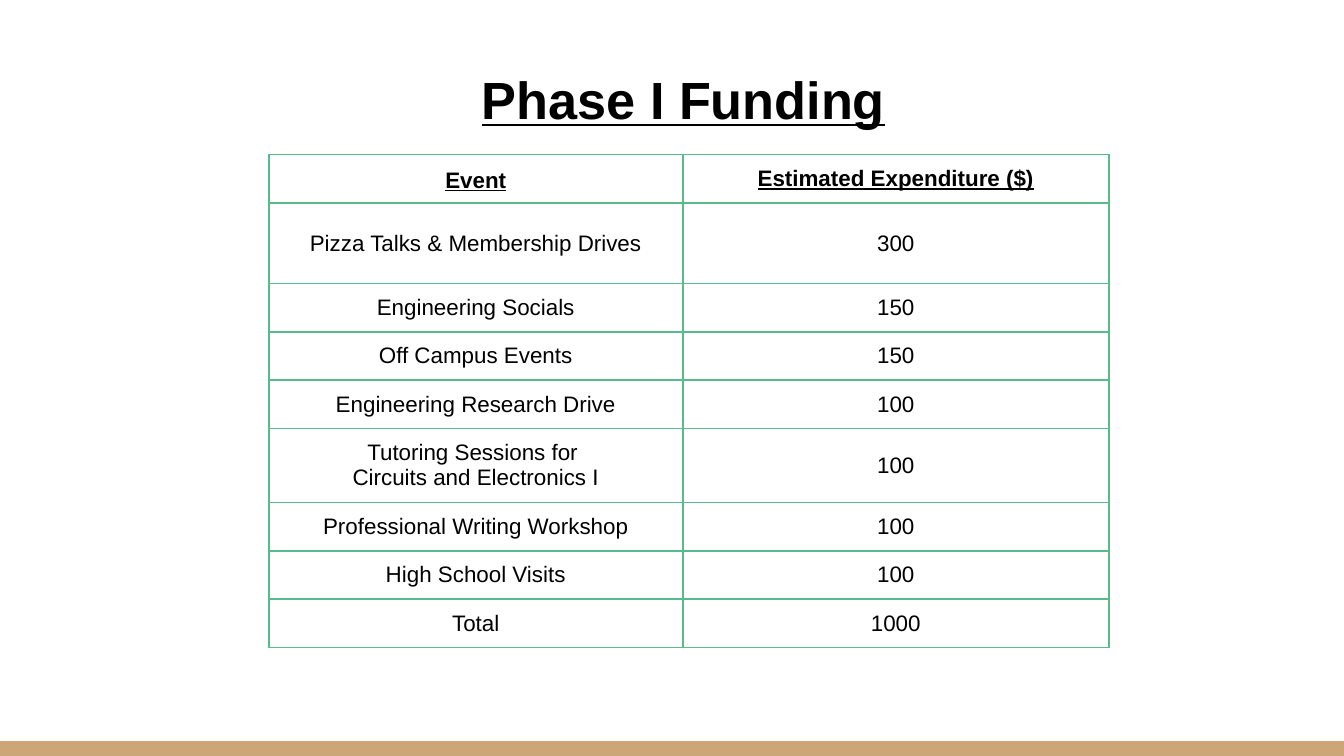
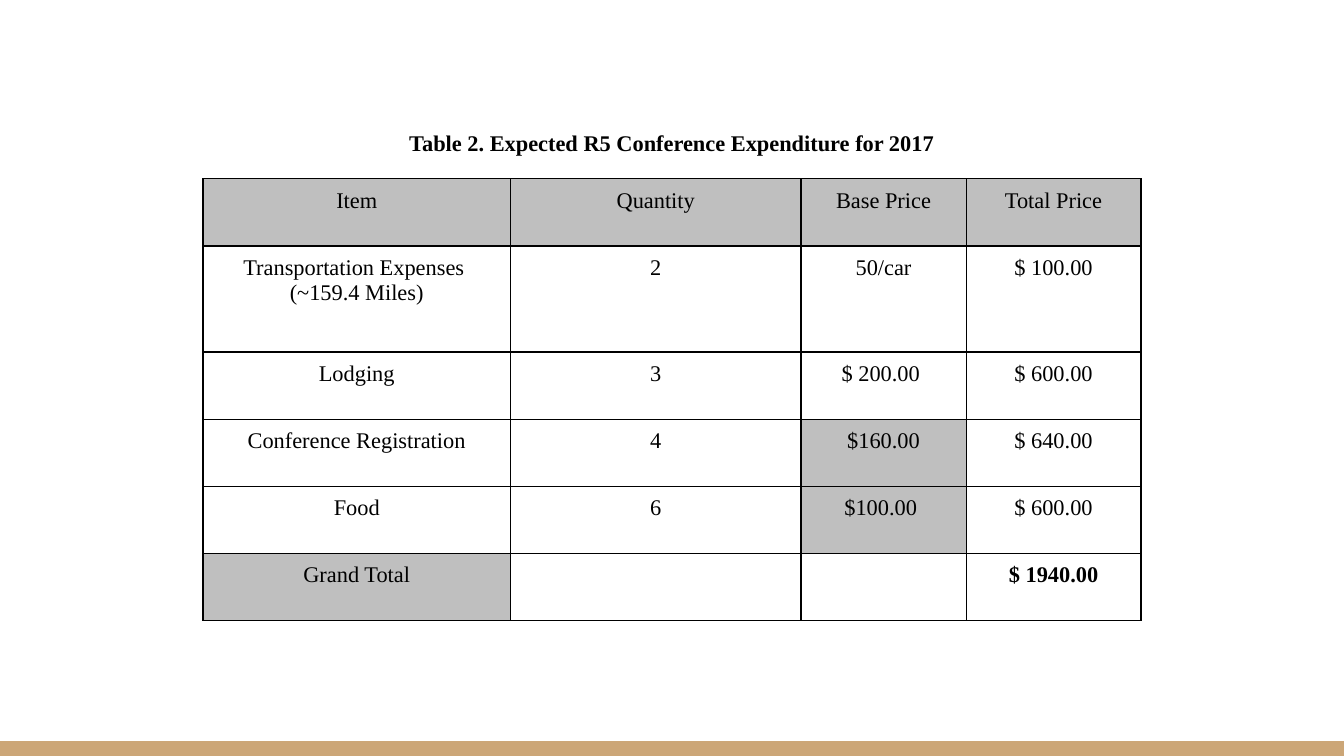
from lxml import etree
from pptx import Presentation
from pptx.dml.color import RGBColor
from pptx.enum.shapes import MSO_SHAPE
from pptx.enum.text import MSO_ANCHOR, MSO_AUTO_SIZE, PP_ALIGN
from pptx.oxml.ns import qn
from pptx.util import Inches, Pt

RECTANGLE = MSO_SHAPE.RECTANGLE
TOP, MIDDLE, BOTTOM = MSO_ANCHOR.TOP, MSO_ANCHOR.MIDDLE, MSO_ANCHOR.BOTTOM
CENTER = PP_ALIGN.CENTER
NO_AUTOFIT = MSO_AUTO_SIZE.NONE

BLACK = RGBColor(0x00, 0x00, 0x00)
TAN = RGBColor(0xCC, 0xA6, 0x77)
GREEN = RGBColor(0x57, 0xBB, 0x8A)
GRAY = RGBColor(0xBF, 0xBF, 0xBF)
SANS, SERIF = "Arial", "Times New Roman"

WIDTH, HEIGHT = 10, 10 * 9 / 16
BAND_HEIGHT = 0.11
TITLE_ONLY = 5

FUNDING = [
    ("Event", "Estimated Expenditure ($)"),
    ("Pizza Talks & Membership Drives", "300"),
    ("Engineering Socials", "150"),
    ("Off Campus Events", "150"),
    ("Engineering Research Drive", "100"),
    ("Tutoring Sessions for \nCircuits and Electronics I", "100"),
    ("Professional Writing Workshop", "100"),
    ("High School Visits", "100"),
    ("Total", "1000"),
]
FUNDING_COLS = [3.08, 3.17]
FUNDING_ROWS = [0.36, 0.6, 0.36, 0.36, 0.36, 0.55, 0.36, 0.36, 0.36]

CONFERENCE = [
    ("Item", "Quantity", "Base Price", "Total Price"),
    ("Transportation Expenses \n(~159.4 Miles)", "2", "50/car", "$ 100.00"),
    ("Lodging", "3", "$ 200.00 ", "$ 600.00"),
    ("Conference Registration", "4", "$160.00", "$ 640.00"),
    ("Food", "6", "$100.00 ", "$ 600.00"),
    ("Grand Total", "", "", "$ 1940.00"),
]
CONFERENCE_COLS = [2.29, 2.16, 1.23, 1.3]
CONFERENCE_ROWS = [0.5, 0.79, 0.5, 0.5, 0.5, 0.5]
CONFERENCE_SHADED = {(0, 0), (0, 1), (0, 2), (0, 3), (3, 2), (4, 2), (5, 0)}
GRAND_TOTAL = (5, 3)


def write(tf, text, font=SANS, size=12, bold=False, underline=False):
    """Fill a text frame with centred black text, one paragraph per line."""
    for i, line in enumerate(text.split("\n")):
        p = tf.paragraphs[0] if i == 0 else tf.add_paragraph()
        p.alignment = CENTER
        p.font.size = Pt(size)
        if line:
            r = p.add_run()
            r.text = line
            r.font.name, r.font.size = font, Pt(size)
            r.font.bold, r.font.underline = bold, underline
            r.font.color.rgb = BLACK


def add_title_slide(prs, text, box, anchor, **style):
    s = prs.slides.add_slide(prs.slide_layouts[TITLE_ONLY])
    title = s.shapes.title
    title.left, title.top, title.width, title.height = map(Inches, box)
    tf = title.text_frame
    tf.word_wrap = True
    tf.auto_size = NO_AUTOFIT
    tf.vertical_anchor = anchor
    tf.margin_left = tf.margin_right = tf.margin_top = tf.margin_bottom = Inches(0.1)
    write(tf, text, **style)
    return s


def set_borders(cell, color, width):
    tc_pr = cell._tc.get_or_add_tcPr()
    for side in ("lnL", "lnR", "lnT", "lnB"):
        ln = etree.SubElement(tc_pr, qn(f"a:{side}"), w=str(Pt(width)))
        fill = etree.SubElement(ln, qn("a:solidFill"))
        etree.SubElement(fill, qn("a:srgbClr"), val=str(color))


def add_grid(s, data, left, top, cols, rows, border, anchor, style_of, shaded=()):
    """Add a bordered table; style_of(row, col) gives each cell's text format."""
    table = s.shapes.add_table(len(rows), len(cols), Inches(left), Inches(top),
                               Inches(sum(cols)), Inches(sum(rows))).table
    table.first_row = table.horz_banding = False
    for col, width in zip(table.columns, cols):
        col.width = Inches(width)
    for row, height in zip(table.rows, rows):
        row.height = Inches(height)
    for i, values in enumerate(data):
        for j, text in enumerate(values):
            cell = table.cell(i, j)
            cell.vertical_anchor = anchor
            cell.margin_left = cell.margin_right = Inches(0.07)
            cell.margin_top = cell.margin_bottom = Inches(0.07)
            set_borders(cell, *border)
            if (i, j) in shaded:
                cell.fill.solid()
                cell.fill.fore_color.rgb = GRAY
            else:
                cell.fill.background()
            write(cell.text_frame, text, **style_of(i, j))
    return table


def add_master_band(prs, s):
    """Draw the bottom band on a slide, then move it to the master."""
    band = s.shapes.add_shape(RECTANGLE, 0, Inches(HEIGHT - BAND_HEIGHT),
                              Inches(WIDTH), Inches(BAND_HEIGHT))
    band.shadow.inherit = False
    band.fill.solid()
    band.fill.fore_color.rgb = TAN
    band.line.fill.background()
    prs.slide_master.shapes.element.append(band.element)


def funding_style(row, col):
    return {"bold": row == 0, "underline": row == 0}


def conference_style(row, col):
    return {"font": SERIF, "bold": (row, col) == GRAND_TOTAL}


def main():
    prs = Presentation()
    prs.slide_width, prs.slide_height = Inches(WIDTH), Inches(HEIGHT)

    s = add_title_slide(prs, "Phase I Funding", (2.08, 0.4, 6.01, 0.63), TOP,
                        size=28, bold=True, underline=True)
    add_master_band(prs, s)
    table = add_grid(s, FUNDING, 2, 1.15, FUNDING_COLS, FUNDING_ROWS,
                     (GREEN, 1), MIDDLE, funding_style)
    table.cell(0, 0).text_frame.paragraphs[0].line_spacing = 1.15

    s = add_title_slide(prs, "Table 2. Expected R5 Conference Expenditure for 2017",
                        (0.34, 0.35, 9.32, 0.91), BOTTOM, font=SERIF, bold=True)
    add_grid(s, CONFERENCE, 1.51, 1.33, CONFERENCE_COLS, CONFERENCE_ROWS,
             (BLACK, 0.75), TOP, conference_style, CONFERENCE_SHADED)

    prs.save("out.pptx")


if __name__ == "__main__":
    main()
